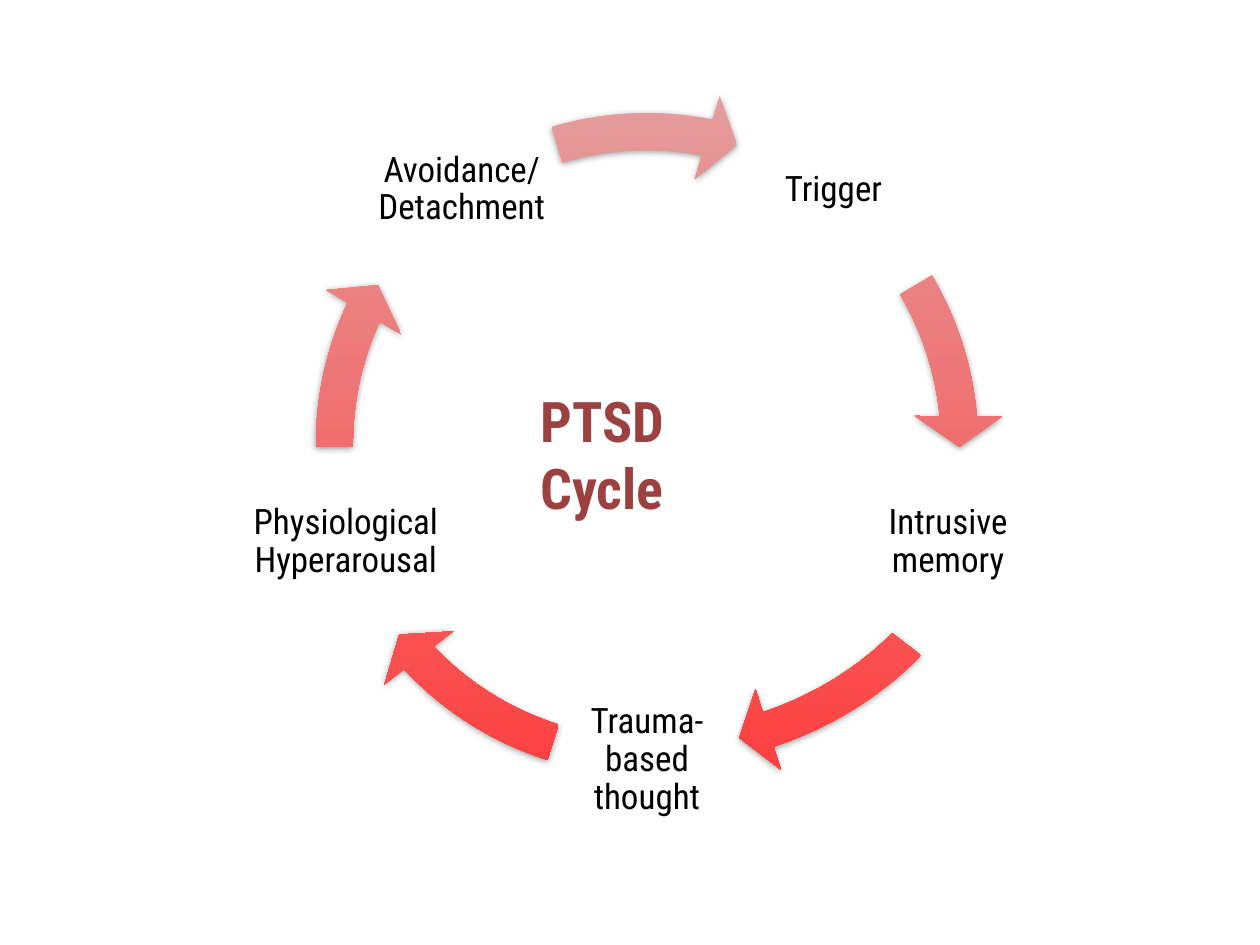
from lxml import etree
from pptx import Presentation
from pptx.dml.color import RGBColor
from pptx.enum import shapes, text
from pptx.oxml import ns
from pptx.util import Inches, Pt

FONT = "Roboto Condensed"
RING = (2.31, 0.7, 5.65, 5.65)
WIDE = (2.07, 0.78, 6.13, 5.5)
STEPS = [
    ("Trigger", (5.86, 0.75, 1.51, 1.51), RING, (212.94, 197.65)),
    ("Intrusive memory", (6.77, 3.55, 1.51, 1.51), WIDE, (40.16, 22.53)),
    ("Trauma-based thought", (4.38, 5.28, 1.51, 1.51), RING, (82.12, 64.49)),
    ("Physiological Hyperarousal", (1.5, 3.55, 2.49, 1.51), RING, (122.99, 107.7)),
    ("Avoidance/Detachment", (2.91, 0.75, 1.51, 1.51), RING, (168.67, 151.98)),
]
TITLE = ("PTSD\vCycle", (4.19, 3.02, 2.22, 0.64))
FADE = ("E49D9D", "FF3D3D")
SHADE = {"blurRad": Pt(4), "dist": Pt(1), "dir": 88 * 60000, "rotWithShape": 0}


def color(code):
    return RGBColor.from_string(code)


def apply(item, vals):
    for key, val in vals.items():
        setattr(item, key, val)


def label(slide, words, box, frame, para, font, ink):
    tf = slide.shapes.add_textbox(*map(Inches, box)).text_frame
    apply(tf, {"word_wrap": True, **frame})
    p = tf.paragraphs[0]
    p.text = words
    apply(p, para)
    for run in p.runs:
        apply(run.font, {"name": FONT, **font})
        run.font.color.rgb = color(ink)


def shadow(shape):
    fx = etree.SubElement(shape._element.spPr, ns.qn("a:effectLst"))
    out = etree.SubElement(fx, ns.qn("a:outerShdw"))
    for key, val in SHADE.items():
        out.set(key, str(val))
    ink = etree.SubElement(out, ns.qn("a:srgbClr"), val="000000")
    etree.SubElement(ink, ns.qn("a:alpha"), val="40000")


def arrow(slide, box, sweep):
    kind = shapes.MSO_SHAPE.CIRCULAR_ARROW
    shape = slide.shapes.add_shape(kind, *map(Inches, box))
    for i, val in enumerate((0.052, 3.357, *sweep, 0.061)):
        shape.adjustments[i] = val
    shape.fill.gradient()
    shape.fill.gradient_angle = 270
    for stop, code in zip(shape.fill.gradient_stops, FADE):
        stop.color.rgb = color(code)
    shape.line.fill.background()
    shadow(shape)


def main():
    prs = Presentation()
    apply(prs, {"slide_width": Inches(10), "slide_height": Inches(7.5)})
    slide = prs.slides.add_slide(prs.slide_layouts[6])
    sides = ("left", "top", "right", "bottom")
    frame = {f"margin_{side}": Inches(0.03) for side in sides}
    frame["vertical_anchor"] = text.MSO_ANCHOR.MIDDLE
    para = {"alignment": text.PP_ALIGN.CENTER, "line_spacing": 0.9}
    for words, box, ring, sweep in STEPS:
        label(slide, words, box, frame, para, {"size": Pt(20)}, "000000")
        arrow(slide, ring, sweep)
    grow = {"auto_size": text.MSO_AUTO_SIZE.SHAPE_TO_FIT_TEXT}
    label(slide, *TITLE, grow, {}, {"size": Pt(32), "bold": True}, "9D4140")
    prs.save("out.pptx")


if __name__ == "__main__":
    main()
